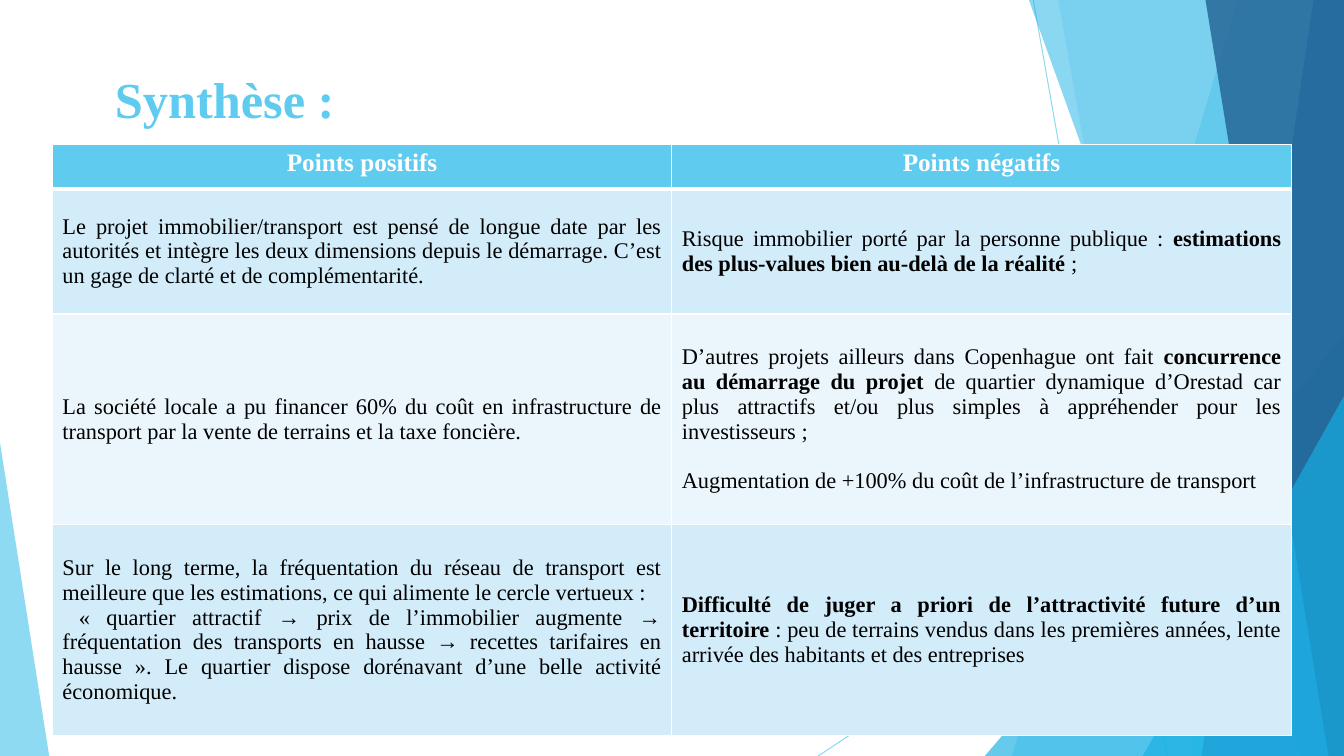
from lxml.etree import SubElement
from pptx import Presentation
from pptx.dml.color import RGBColor
from pptx.enum.shapes import MSO_CONNECTOR, MSO_SHAPE
from pptx.enum.text import MSO_ANCHOR, PP_ALIGN
from pptx.oxml.ns import qn
from pptx.util import Cm, Pt

FONT = "Times New Roman"
SKY, WHITE, BLACK = "5FCBEF", "FFFFFF", "000000"
WIDTH, HEIGHT = 33.87, 19.05

TITLE = "Synthèse :"
HEADINGS = ["Points positifs", "Points négatifs"]
ROWS = [
    (
        [[("Le projet immobilier/transport est pensé de longue date par les autorités et intègre "
           "les deux dimensions depuis le démarrage. C’est un gage de clarté et de "
           "complémentarité.", False)]],
        [[("Risque immobilier porté par la personne publique : ", False),
          ("estimations des plus-values bien au-delà de la réalité ", True),
          (";", False)]],
    ),
    (
        [[("La société locale a pu financer 60% du coût en infrastructure de transport par la "
           "vente de terrains et la taxe foncière.", False)]],
        [[("D’autres projets ailleurs dans Copenhague ont fait ", False),
          ("concurrence au démarrage du projet", True),
          (" de quartier dynamique d’Orestad car plus attractifs et/ou plus simples à "
           "appréhender pour les investisseurs ;", False)],
         [("Augmentation de +100% du coût de l’infrastructure de transport", False)]],
    ),
    (
        [[("Sur le long terme, la fréquentation du réseau de transport est meilleure que les "
           "estimations, ce qui alimente le cercle vertueux :", False)],
         [(" « quartier attractif → prix de l’immobilier augmente → fréquentation des transports "
           "en hausse → recettes tarifaires en hausse ». Le quartier dispose dorénavant d’une "
           "belle activité économique.", False)]],
        [[("Difficulté de juger a priori de l’attractivité future d’un territoire", True),
          (" : peu de terrains vendus dans les premières années, lente arrivée des habitants et "
           "des entreprises", False)]],
    ),
]
ROW_FILLS = ["D2ECF9", "EAF6FC", "D2ECF9"]
ROW_HEIGHTS = [1.12, 3.15, 5.31, 5.31]
COLUMN_WIDTH = 15.61
PARAGRAPH_GAPS = {(2, 1): 17.7}

LINES = [(26.04, 0, 29.41, HEIGHT), (WIDTH, 10.24, 20.62, HEIGHT)]
FACETS = [
    ("band", (31.19, 25.5), SKY, 36),
    ("band", (26.67, 30.05), SKY, 20),
    ("triangle", (24.82, 8.46, 9.05, 1), "17B0E4", 66),
    ("band", (25.93, 32.79), "17B0E4", 50),
    ("band", (33.1, 30.28), "2E83C3", 70),
    ("band", (30.38, 33.48), "226292", 80),
    ("triangle", (28.8, 9.98, 5.07, 1), "17B0E4", 66),
    ("triangle", (0, 11.15, 1.24, 0), SKY, 70),
]


def color(value):
    return RGBColor.from_string(value)


def set_opacity(element, percent):
    for color_element in element.iter(qn("a:srgbClr")):
        SubElement(color_element, qn("a:alpha")).set("val", str(percent * 1000))


def add_line(slide, start_x, start_y, end_x, end_y):
    line = slide.shapes.add_connector(
        MSO_CONNECTOR.STRAIGHT, Cm(start_x), Cm(start_y), Cm(end_x), Cm(end_y))
    line.line.color.rgb = color(SKY)
    line.line.width = Pt(0.75)
    properties = line._element.spPr
    set_opacity(properties, 70)
    SubElement(properties, qn("a:effectLst"))


def add_facet(slide, kind, geometry, fill, opacity):
    if kind == "band":
        top_x, bottom_x = geometry
        builder = slide.shapes.build_freeform(Cm(top_x), 0)
        corners = [(WIDTH, 0), (WIDTH, HEIGHT), (bottom_x, HEIGHT)]
        builder.add_line_segments([(Cm(x), Cm(y)) for x, y in corners], close=True)
        shape = builder.convert_to_shape()
    else:
        left, top, width, apex = geometry
        shape = slide.shapes.add_shape(
            MSO_SHAPE.ISOSCELES_TRIANGLE, Cm(left), Cm(top), Cm(width), Cm(HEIGHT - top))
        shape.adjustments[0] = apex
    shape.shadow.inherit = False
    shape.fill.solid()
    shape.fill.fore_color.rgb = color(fill)
    shape.line.fill.background()
    set_opacity(shape._element.spPr, opacity)


def format_run(run, size, text_color, bold):
    run.font.name = FONT
    run.font.size = Pt(size)
    run.font.bold = bold
    run.font.color.rgb = color(text_color)


def style_cell(cell, fill, top_width, bottom_width):
    properties = cell._tc.get_or_add_tcPr()
    for side, width in [("L", 1), ("R", 1), ("T", top_width), ("B", bottom_width)]:
        border = SubElement(properties, qn(f"a:ln{side}"))
        border.set("w", str(Pt(width)))
        SubElement(SubElement(border, qn("a:solidFill")), qn("a:srgbClr")).set("val", WHITE)
    cell.fill.solid()
    cell.fill.fore_color.rgb = color(fill)


def fill_cell(cell, paragraphs, gap):
    cell.vertical_anchor = MSO_ANCHOR.MIDDLE
    for index, runs in enumerate(paragraphs):
        text_frame = cell.text_frame
        paragraph = text_frame.add_paragraph() if index else text_frame.paragraphs[0]
        paragraph.alignment = PP_ALIGN.JUSTIFY
        if index:
            paragraph.space_before = Pt(gap)
        for text, bold in runs:
            run = paragraph.add_run()
            run.text = text
            format_run(run, 16, BLACK, bold)


def add_summary_table(slide):
    table = slide.shapes.add_table(
        len(ROW_HEIGHTS), len(HEADINGS), Cm(1.32), Cm(3.64),
        Cm(COLUMN_WIDTH * len(HEADINGS)), Cm(sum(ROW_HEIGHTS))).table
    for row, height in zip(table.rows, ROW_HEIGHTS):
        row.height = Cm(height)
    for column_index, heading in enumerate(HEADINGS):
        table.columns[column_index].width = Cm(COLUMN_WIDTH)
        cell = table.cell(0, column_index)
        cell.text_frame.text = heading
        paragraph = cell.text_frame.paragraphs[0]
        paragraph.alignment = PP_ALIGN.CENTER
        format_run(paragraph.runs[0], 18, WHITE, True)
        style_cell(cell, SKY, 1, 3)
    for row_index, (contents, fill) in enumerate(zip(ROWS, ROW_FILLS), start=1):
        for column_index, paragraphs in enumerate(contents):
            cell = table.cell(row_index, column_index)
            fill_cell(cell, paragraphs, PARAGRAPH_GAPS.get((row_index, column_index), 0))
            style_cell(cell, fill, 3 if row_index == 1 else 1, 1)


def main():
    presentation = Presentation()
    presentation.slide_width, presentation.slide_height = Cm(WIDTH), Cm(HEIGHT)
    slide = presentation.slides.add_slide(presentation.slide_layouts[5])
    for line in LINES:
        add_line(slide, *line)
    for facet in FACETS:
        add_facet(slide, *facet)

    title = slide.shapes.title
    title.left, title.top, title.width, title.height = Cm(2.64), Cm(1.42), Cm(28.58), Cm(2.13)
    title.text_frame.text = TITLE
    title.text_frame.vertical_anchor = MSO_ANCHOR.MIDDLE
    paragraph = title.text_frame.paragraphs[0]
    paragraph.alignment = PP_ALIGN.LEFT
    format_run(paragraph.runs[0], 36, SKY, True)

    add_summary_table(slide)
    presentation.save("out.pptx")


if __name__ == "__main__":
    main()
